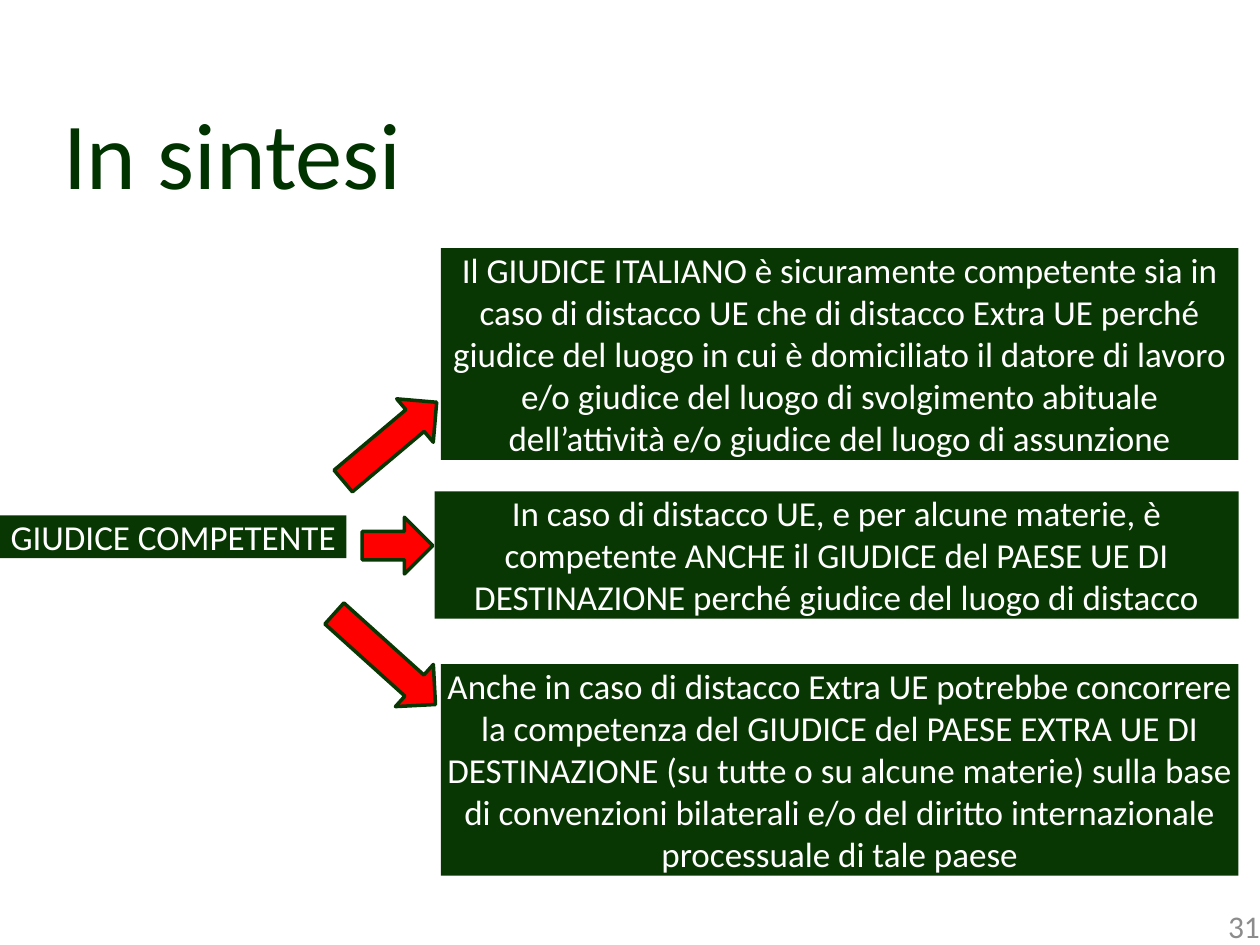
from pptx import Presentation
from pptx.dml.color import RGBColor
from pptx.enum import shapes, text
from pptx.util import Inches, Pt

GREEN = RGBColor(0x09, 0x37, 0x03)
DARK = RGBColor(0x00, 0x33, 0x00)
GRAY = RGBColor(0x8C, 0x8C, 0x8C)
WHITE = RGBColor(0xFF, 0xFF, 0xFF)
RED = RGBColor(0xFF, 0x00, 0x00)

TITLE = "In sintesi"
NUMBER = "31"
RIGHT = 9.83
TOPIC = (0, 4.09, 2.75, 0.34)
COURTS = [
    (3.5, 1.97, 1.68, [
        "Il GIUDICE ITALIANO è sicuramente competente sia in caso di distacco UE "
        "che di distacco Extra UE perché giudice del luogo in cui è domiciliato "
        "il datore di lavoro",
        "e/o giudice del luogo di svolgimento abituale dell’attività e/o giudice "
        "del luogo di assunzione"]),
    (3.45, 3.9, 1.01, [
        "In caso di distacco UE, e per alcune materie, è competente ANCHE il "
        "GIUDICE del PAESE UE DI DESTINAZIONE perché giudice del luogo di distacco"]),
    (3.5, 5.27, 1.68, [
        "Anche in caso di distacco Extra UE potrebbe concorrere la competenza del "
        "GIUDICE del PAESE EXTRA UE DI DESTINAZIONE (su tutte o su alcune materie) "
        "sulla base di convenzioni bilaterali e/o del diritto internazionale "
        "processuale di tale paese"]),
]
ARROWS = [
    (2.93, 4.05, 0.56, 270),
    (2.87, 3.02, 0.97, 229.9),
    (2.83, 4.69, 1.08, 312),
]
THICK = 0.45
FRAME = dict(margin_left=0, margin_top=0, margin_right=0, margin_bottom=0,
             word_wrap=True, auto_size=text.MSO_AUTO_SIZE.NONE,
             vertical_anchor=text.MSO_ANCHOR.TOP)


def apply(item, values):
    for name, value in values.items():
        setattr(item, name, value)


def write(shape, lines, size, color, align):
    frame = shape.text_frame
    apply(frame, FRAME)
    frame.text = "\n".join(lines)
    for para in frame.paragraphs:
        para.alignment = align
        apply(para.font, dict(name="Calibri", size=Pt(size)))
        para.font.color.rgb = color


def draw(kind, place, fill):
    shape = slide.shapes.add_shape(kind, *map(Inches, place))
    shape.shadow.inherit = False
    shape.fill.solid()
    shape.fill.fore_color.rgb = fill
    shape.line.fill.background()
    return shape


def label(place, lines):
    box = draw(shapes.MSO_SHAPE.RECTANGLE, place, GREEN)
    write(box, lines, 20, WHITE, text.PP_ALIGN.CENTER)


deck = Presentation()
apply(deck, dict(slide_width=Inches(10), slide_height=Inches(7.5)))
slide = deck.slides.add_slide(deck.slide_layouts[5])

title = slide.shapes.title
apply(title, dict(left=Inches(0.5), top=Inches(0.75),
                  width=Inches(7.55), height=Inches(0.91)))
write(title, [TITLE], 54, DARK, text.PP_ALIGN.LEFT)

page = slide.shapes.add_textbox(*map(Inches, (7.7, 7.2, 2.3, 0.3)))
write(page, [NUMBER], 18, GRAY, text.PP_ALIGN.RIGHT)

label(TOPIC, ["GIUDICE COMPETENTE"])
for left, top, height, lines in COURTS:
    label((left, top, RIGHT - left, height), lines)

for left, top, length, angle in ARROWS:
    arrow = draw(shapes.MSO_SHAPE.DOWN_ARROW, (left, top, THICK, length), RED)
    arrow.rotation = angle
    arrow.line.color.rgb = GREEN
    arrow.line.width = Pt(2)

deck.save("out.pptx")
